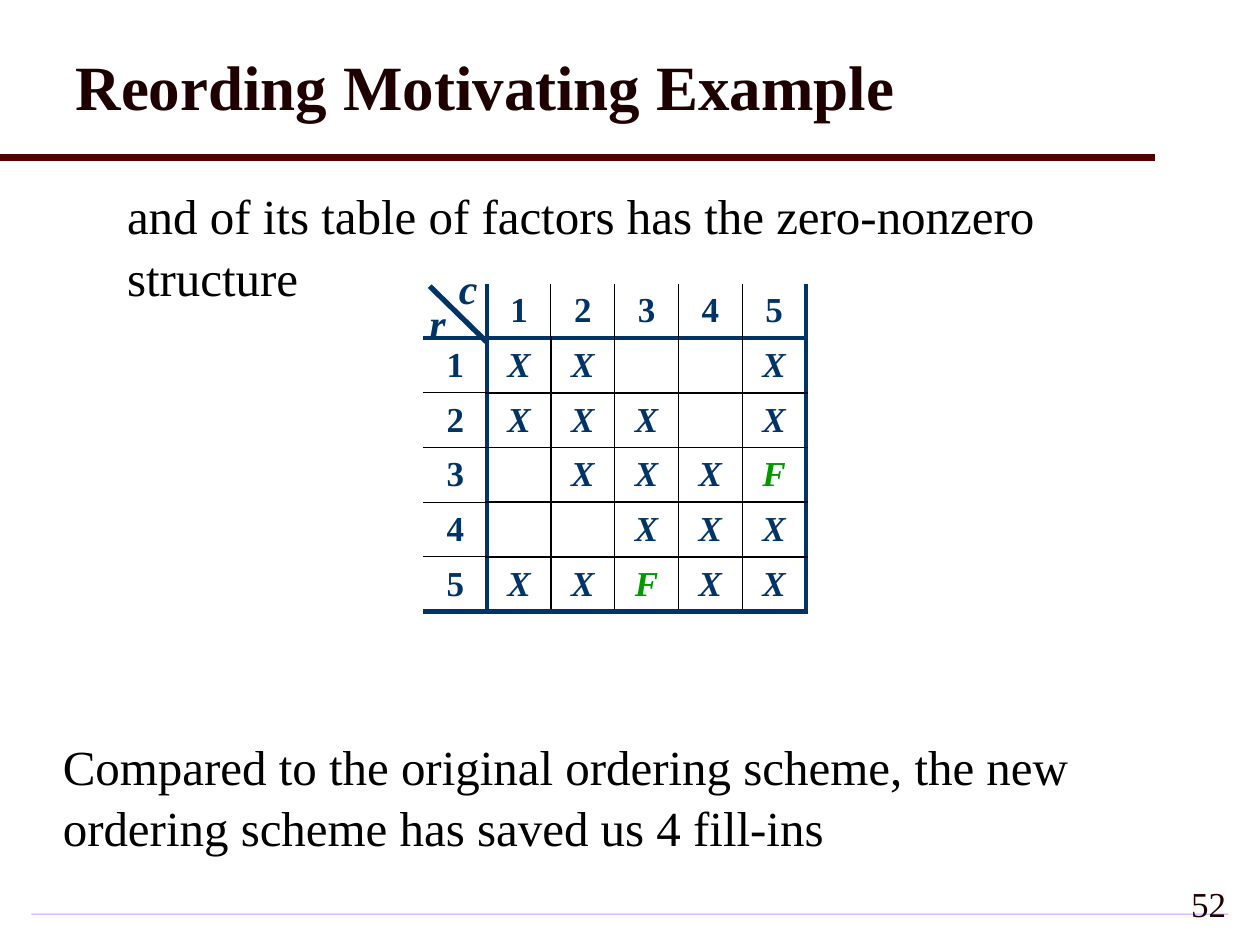
"""Builds the slide on the fill-ins of a reordered factor table."""
from dataclasses import dataclass

from lxml import etree
from pptx import Presentation, util as u
from pptx.dml.color import RGBColor
from pptx.enum import shapes, text
from pptx.oxml.ns import qn


@dataclass(frozen=True)
class Theme:
    """Holds the colours, type sizes and line widths."""
    font: str = "Times New Roman"
    title: str = "1E0000"
    rule: str = "500000"
    footer: str = "CC99FF"
    body: str = "000000"
    navy: str = "003366"
    fill_in: str = "009900"
    title_pt: int = 36
    body_pt: int = 28
    label_pt: int = 24
    cell_pt: int = 20
    heavy: float = 3
    grid: float = 1
    thin: float = 0.75


T = Theme()
W, H = 10, 7.5
FACTORS = ["XX  X", "XXX X", " XXXF", "  XXX", "XXFXX"]


def style(p, size, color, bold=False, italic=False, align=text.PP_ALIGN.LEFT):
    """Sets the font and alignment of a paragraph."""
    p.alignment = align
    f = p.font
    f.name, f.size, f.bold, f.italic = T.font, u.Pt(size), bold, italic
    f.color.rgb = RGBColor.from_string(color)


def place(sp, box):
    """Moves a shape to a box given in inches."""
    sp.left, sp.top, sp.width, sp.height = map(u.Inches, box)


def add_text(s, box, words):
    """Adds a wrapped text box and returns its frame."""
    tf = s.shapes.add_textbox(*map(u.Inches, box)).text_frame
    tf.word_wrap = True
    tf.text = words
    return tf


def add_line(s, start, end, color, width):
    """Adds a straight line without a shadow."""
    line = s.shapes.add_connector(
        shapes.MSO_CONNECTOR.STRAIGHT, *map(u.Inches, (*start, *end)))
    line.line.color.rgb = RGBColor.from_string(color)
    line.line.width = u.Pt(width)
    etree.SubElement(line._element.spPr, qn("a:effectLst"))


def add_header(s, box):
    """Fills the title placeholder and draws the rule at its foot."""
    x, y, w, h = box
    place(s.shapes.title, box)
    tf = s.shapes.title.text_frame
    tf.text = "Reording Motivating Example"
    tf.vertical_anchor = text.MSO_ANCHOR.MIDDLE
    style(tf.paragraphs[0], T.title_pt, T.title, bold=True)
    add_line(s, (0, y + h), (W * 0.917, y + h), T.rule, 4)


def add_body(s, box):
    """Writes the lead-in and the conclusion, with room for the table between."""
    tf = add_text(s, box, "and of its table of factors has the zero-nonzero structure")
    lead, end = tf.paragraphs[0], tf.add_paragraph()
    end.text = ("Compared to the original ordering scheme, "
                "the new ordering scheme has saved us 4 fill-ins")
    lead._p.get_or_add_pPr().set("marL", str(u.Inches(0.51)))
    end.space_before = u.Pt(244)
    for p in (lead, end):
        p.line_spacing = 1.05
        style(p, T.body_pt, T.body)


def border(cell, side, line):
    """Draws one side of a cell, or clears it when there is no line."""
    ln = etree.SubElement(cell._tc.get_or_add_tcPr(), qn("a:" + side))
    if line is None:
        etree.SubElement(ln, qn("a:noFill"))
        return
    color, width = line
    ln.set("w", str(u.Pt(width)))
    fill = etree.SubElement(ln, qn("a:solidFill"))
    etree.SubElement(fill, qn("a:srgbClr")).set("val", color)


def edge(i, last, in_header):
    """Gives the line at grid boundary i: open start, heavy header and end."""
    if i == 0:
        return None
    if i in (1, last):
        return T.navy, T.heavy
    return T.body, T.thin if in_header else T.grid


def add_factor_table(s, box):
    """Builds the factor table and the split corner with its labels."""
    x, y, w, h = box
    rows = [" 12345"] + [f"{i}{row}" for i, row in enumerate(FACTORS, 1)]
    n = len(rows)
    cw, rh = w / n, h / n
    tbl = s.shapes.add_table(n, n, *map(u.Inches, box)).table
    tbl.first_row = tbl.horz_banding = False
    for r, row in enumerate(rows):
        tbl.rows[r].height = u.Inches(rh)
        for c, mark in enumerate(row):
            cell = tbl.cell(r, c)
            cell.text = mark.strip()
            cell.vertical_anchor = text.MSO_ANCHOR.MIDDLE
            style(cell.text_frame.paragraphs[0], T.cell_pt,
                  T.fill_in if mark == "F" else T.navy, bold=True,
                  italic=mark.isalpha(), align=text.PP_ALIGN.CENTER)
            border(cell, "lnL", edge(c, n, r == 0))
            border(cell, "lnR", edge(c + 1, n, r == 0))
            border(cell, "lnT", edge(r, n, c == 0))
            border(cell, "lnB", edge(r + 1, n, c == 0))
            cell.fill.background()
    for label, dx, dy in (("r", -0.1, 0.14), ("c", 0.36, -0.5)):
        tf = add_text(s, (x + dx * cw, y + dy * rh, 0.21, 0.5), label)
        style(tf.paragraphs[0], T.label_pt, T.navy, bold=True, italic=True)
    add_line(s, (x + 0.1 * cw, y + 0.05 * rh), (x + cw, y + 1.08 * rh), T.navy, T.heavy)


def add_footer(s, box):
    """Draws the footer rule and the slide number."""
    x, y, w, h = box
    bar = s.shapes.add_shape(shapes.MSO_SHAPE.RECTANGLE, *map(u.Inches, (x, y + h * 0.66, w, 0.01)))
    bar.shadow.inherit = False
    bar.fill.solid()
    bar.fill.fore_color.rgb = RGBColor.from_string(T.footer)
    bar.line.fill.background()
    tf = add_text(s, (W * 0.775, y, W * 0.208, h), "52")
    tf.vertical_anchor = text.MSO_ANCHOR.MIDDLE
    style(tf.paragraphs[0], T.cell_pt, T.title, align=text.PP_ALIGN.RIGHT)


def main():
    """Builds and saves the slide."""
    prs = Presentation()
    prs.slide_width, prs.slide_height = u.Inches(W), u.Inches(H)
    s = prs.slides.add_slide(prs.slide_layouts[5])
    add_footer(s, (W * 0.025, 6.92, W * 0.95, 0.5))
    add_body(s, (W * 0.04, 1.4, W * 0.902, 5.5))
    add_factor_table(s, (3.36, 2.25, 3.04, 2.6))
    add_header(s, (W * 0.05, 0.1, W * 0.9, 1.15))
    prs.save("out.pptx")


if __name__ == "__main__":
    main()
